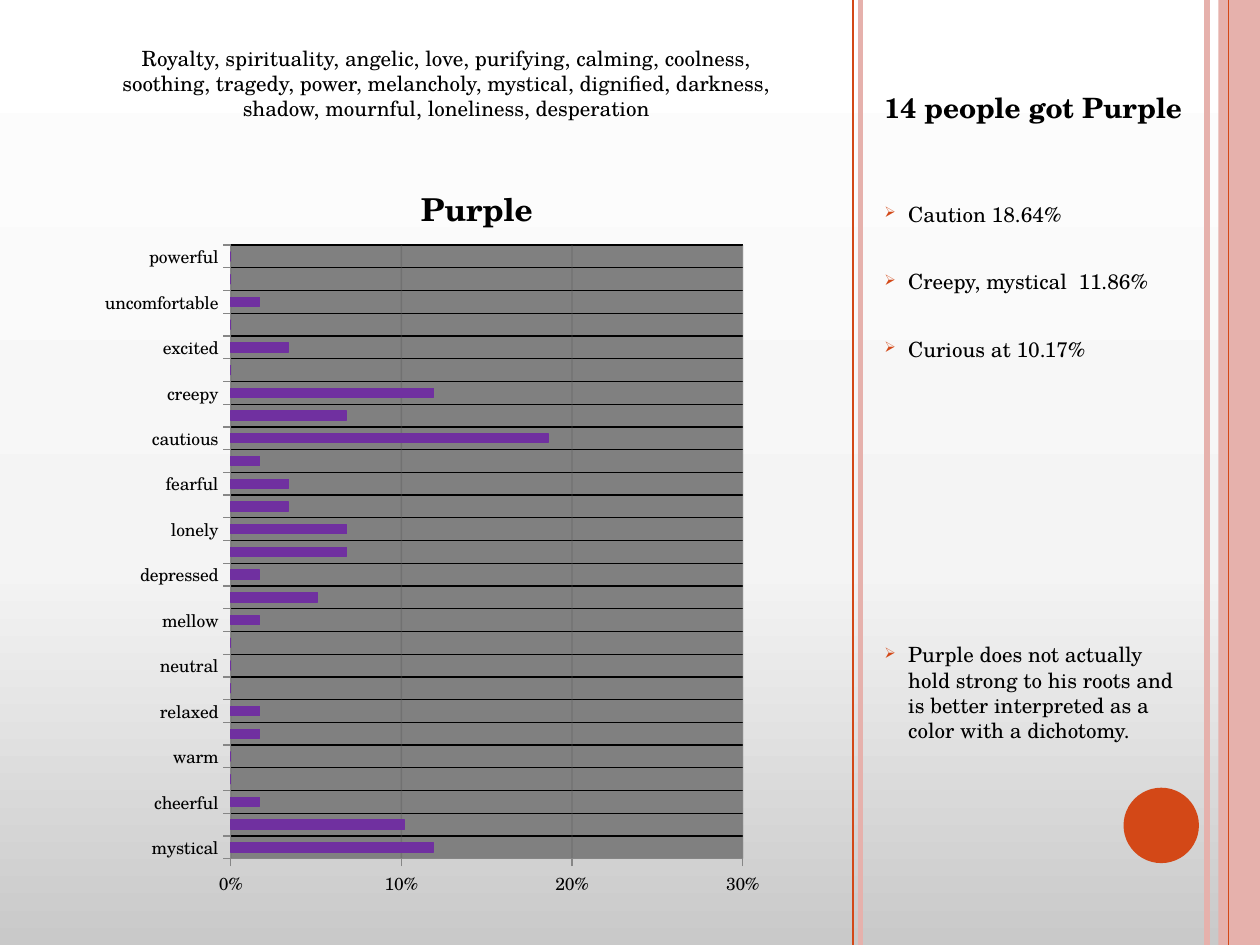
from copy import deepcopy
from dataclasses import dataclass

from lxml.etree import SubElement
from pptx import Presentation
from pptx.chart.data import CategoryChartData
from pptx.dml.color import RGBColor
from pptx.enum.chart import XL_CHART_TYPE, XL_TICK_MARK
from pptx.enum.shapes import MSO_CONNECTOR, MSO_SHAPE
from pptx.enum.text import MSO_AUTO_SIZE, PP_ALIGN
from pptx.oxml import parse_xml
from pptx.oxml.ns import nsdecls, qn
from pptx.util import Cm, Pt


@dataclass(frozen=True)
class Theme:
    font: str = "TeX Gyre Schola"
    ink: RGBColor = RGBColor.from_string("000000")
    orange: RGBColor = RGBColor.from_string("D34817")
    pink: RGBColor = RGBColor.from_string("E6B1AC")
    purple: RGBColor = RGBColor.from_string("7030A0")
    plot: str = "808080"
    grid: RGBColor = RGBColor.from_string("595959")
    axis: RGBColor = RGBColor.from_string("868686")
    backdrop: tuple = ((0, "C9C9C9"), (0.4, "F4F4F4"), (1, "FFFFFF"))
    label: Pt = Pt(10)
    body: Pt = Pt(12)
    heading: Pt = Pt(16)
    chart_title: Pt = Pt(18)


theme = Theme()


def set_font(font, size, bold=False):
    font.name = theme.font
    font.size = size
    font.bold = bold
    font.color.rgb = theme.ink


def place(element, index, **fractions):
    for old in element.findall(qn("c:layout")):
        element.remove(old)
    layout = parse_xml(f"<c:layout {nsdecls('c')}/>")
    manual = SubElement(layout, qn("c:manualLayout"))
    if "w" in fractions:
        SubElement(manual, qn("c:layoutTarget")).set("val", "inner")
    for side in ("x", "y"):
        SubElement(manual, qn(f"c:{side}Mode")).set("val", "edge")
    for side, value in fractions.items():
        SubElement(manual, qn(f"c:{side}")).set("val", str(value))
    element.insert(index, layout)


deck = Presentation()
deck.slide_width, deck.slide_height = Cm(25.4), Cm(19.05)
page = deck.slides.add_slide(deck.slide_layouts[6])

backdrop = page.background.fill
backdrop.gradient()
backdrop.gradient_angle = 90
stop_list = page._element.find(".//" + qn("a:gsLst"))
stop_list.append(deepcopy(stop_list[-1]))
for stop, (position, color) in zip(backdrop.gradient_stops, theme.backdrop):
    stop.position = position
    stop.color.rgb = RGBColor.from_string(color)

for kind, color, left, top, width, height in (
    (MSO_SHAPE.OVAL, theme.orange, 22.65, 15.88, 1.52, 1.52),
    (MSO_SHAPE.RECTANGLE, theme.pink, 24.56, 0, 0.84, 19.05),
):
    shape = page.shapes.add_shape(kind, Cm(left), Cm(top), Cm(width), Cm(height))
    shape.shadow.inherit = False
    shape.fill.solid()
    shape.fill.fore_color.rgb = color
    shape.line.fill.background()

for x, color, weight in (
    (24.33, theme.pink, 3),
    (24.77, theme.orange, 0.75),
    (17.35, theme.pink, 3),
    (17.2, theme.orange, 1),
):
    rule = page.shapes.add_connector(MSO_CONNECTOR.STRAIGHT, Cm(x), 0, Cm(x), deck.slide_height)
    rule.line.color.rgb = color
    rule.line.width = Pt(weight)
    SubElement(rule._element.spPr, qn("a:effectLst"))

findings = page.shapes.add_textbox(Cm(17.58), Cm(1.7), Cm(6.55), Cm(14.6)).text_frame
findings.word_wrap = True
para = findings.paragraphs[0]
para.text = "14 people got Purple"
para.space_before, para.space_after = Pt(1), Pt(4)
set_font(para.font, theme.heading, True)
for text, gap in (
    ("Caution 18.64%", 40),
    ("Creepy, mystical  11.86%", 20.4),
    ("Curious at 10.17%", 20.4),
    ("Purple does not actually hold strong to his roots and is better "
     "interpreted as a color with a dichotomy.", 156),
):
    para = findings.add_paragraph()
    para.text = text
    para.space_before, para.space_after = Pt(gap), Pt(4)
    set_font(para.font, theme.body)
    properties = para._p.get_or_add_pPr()
    properties.set("marL", str(Cm(0.48)))
    properties.set("indent", str(Cm(-0.48)))
    bullet = (
        f"<a:buClr {nsdecls('a')}><a:srgbClr val='{theme.orange}'/></a:buClr>",
        f"<a:buSzPct {nsdecls('a')} val='70000'/>",
        f"<a:buChar {nsdecls('a')} char='➢'/>",
    )
    for offset, part in enumerate(bullet):
        properties.insert(2 + offset, parse_xml(part))

shares = {
    "mystical": 0.119, "curious": 0.102, "cheerful": 0.017, "hopefull": 0, "warm": 0,
    "soothing": 0.017, "relaxed": 0.017, "secure": 0, "neutral": 0, "comfortable": 0,
    "mellow": 0.017, "melancholy": 0.051, "depressed": 0.017, "cold": 0.068,
    "lonely": 0.068, "desperate": 0.034, "fearful": 0.034, "helpless": 0.017,
    "cautious": 0.186, "scared": 0.068, "creepy": 0.119, "anxious": 0, "excited": 0.034,
    "urgent": 0, "uncomfortable": 0.017, "angry": 0, "powerful": 0,
}
data = CategoryChartData(number_format="0%")
data.categories = list(shares)
data.add_series("Purple", list(shares.values()))
chart = page.shapes.add_chart(
    XL_CHART_TYPE.BAR_CLUSTERED, Cm(1.9), Cm(2.75), Cm(13.76), Cm(15.66), data
).chart
set_font(chart.font, theme.label)
chart.has_legend = False
chart.has_title = True
title = chart.chart_title
title.text_frame.text = "Purple"
set_font(title.text_frame.paragraphs[0].font, theme.chart_title, True)
place(title._element, 1, x=0.47, y=0.05)

plot = chart.plots[0]
plot.gap_width = 150
plot.vary_by_categories = False
series = plot.series[0]
series.format.fill.solid()
series.format.fill.fore_color.rgb = theme.purple
series.format.line.color.rgb = theme.purple
series.format.line.width = Pt(0.75)

for axis, grid_color in ((chart.category_axis, theme.ink), (chart.value_axis, theme.grid)):
    axis.major_tick_mark = XL_TICK_MARK.OUTSIDE
    axis.minor_tick_mark = XL_TICK_MARK.NONE
    axis.format.line.color.rgb = theme.axis
    axis.has_major_gridlines = True
    axis.major_gridlines.format.line.color.rgb = grid_color
    axis.major_gridlines.format.line.width = Pt(0.75)
    set_font(axis.tick_labels.font, theme.label)
values = chart.value_axis
values.minimum_scale, values.maximum_scale, values.major_unit = 0, 0.3, 0.1
values.tick_labels.number_format = "0%"
values.tick_labels.number_format_is_linked = False
grid_fill = values._element.find(qn("c:majorGridlines")).find(".//" + qn("a:srgbClr"))
SubElement(grid_fill, qn("a:alpha")).set("val", "36000")

plot_area = chart._chartSpace.find(".//" + qn("c:plotArea"))
place(plot_area, 0, x=0.2, y=0.14, w=0.75, h=0.79)
plot_area.append(parse_xml(
    f"<c:spPr {nsdecls('c', 'a')}><a:solidFill><a:srgbClr val='{theme.plot}'/></a:solidFill></c:spPr>"
))

meanings = page.shapes.add_textbox(Cm(1.7), Cm(0.79), Cm(14.6), Cm(1.8)).text_frame
meanings.word_wrap = True
meanings.auto_size = MSO_AUTO_SIZE.SHAPE_TO_FIT_TEXT
para = meanings.paragraphs[0]
para.text = (
    "Royalty, spirituality, angelic, love, purifying, calming, coolness, soothing, tragedy, "
    "power, melancholy, mystical, dignified, darkness, shadow, mournful, loneliness, desperation"
)
para.alignment = PP_ALIGN.CENTER
para.space_after = Pt(10)
set_font(para.font, theme.body)

deck.save("out.pptx")
